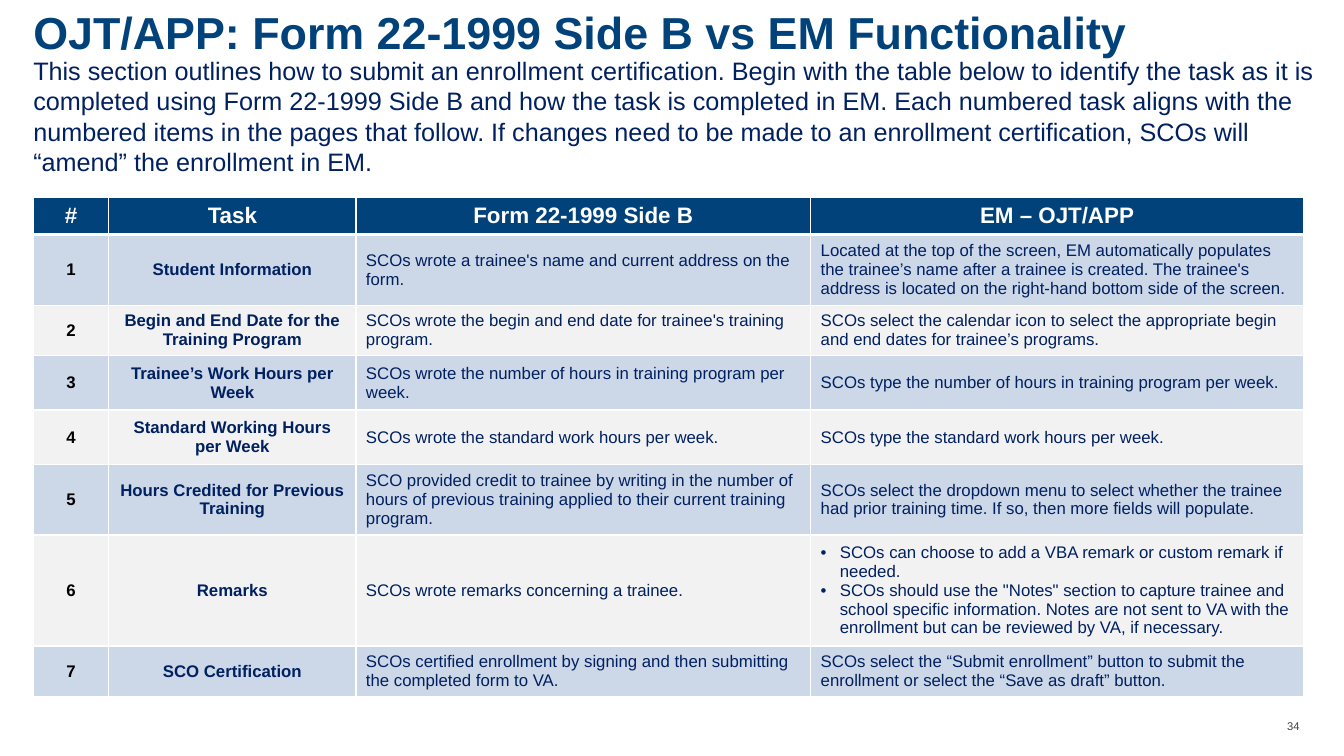
from dataclasses import dataclass

from lxml import etree
from pptx import Presentation
from pptx import util as u
from pptx.dml.color import RGBColor
from pptx.enum import text
from pptx.oxml.ns import qn


@dataclass(frozen=True)
class Theme:
    font: str = "Arial"
    heading: str = "004279"
    body: str = "002060"
    black: str = "000000"
    white: str = "FFFFFF"
    bands: tuple = ("CCD7E7", "F2F2F2")
    title_size: int = 32
    intro_size: int = 18
    header_size: int = 16
    cell_size: int = 12
    number_size: int = 8


CENTER, RIGHT = text.PP_ALIGN.CENTER, text.PP_ALIGN.RIGHT
MIDDLE = text.MSO_ANCHOR.MIDDLE

TITLE = "OJT/APP: Form 22-1999 Side B vs EM Functionality"
INTRO = (
    "This section outlines how to submit an enrollment certification. Begin with the "
    "table below to identify the task as it is completed using Form 22-1999 Side B and "
    "how the task is completed in EM. Each numbered task aligns with the numbered items "
    "in the pages that follow. If changes need to be made to an enrollment "
    "certification, SCOs will “amend” the enrollment in EM."
)
HEADERS = ("#", "Task", "Form 22-1999 Side B", "EM – OJT/APP")
COLUMN_WIDTHS = (0.75, 2.45, 4.51, 4.89)
ROW_HEIGHTS = (0.26, 0.39, 0.39, 0.54, 0.54, 0.54, 0.7, 0.39)

# Task, paper form, EM; a tuple holds bulleted paragraphs
TASKS = (
    ("Student Information",
     "SCOs wrote a trainee's name and current address on the form.",
     "Located at the top of the screen, EM automatically populates the trainee’s name "
     "after a trainee is created. The trainee's address is located on the right-hand "
     "bottom side of the screen."),
    ("Begin and End Date for the Training Program",
     "SCOs wrote the begin and end date for trainee's training program.",
     "SCOs select the calendar icon to select the appropriate begin and end dates for "
     "trainee’s programs."),
    ("Trainee’s Work Hours per Week",
     "SCOs wrote the number of hours in training program per week.",
     "SCOs type the number of hours in training program per week."),
    ("Standard Working Hours per Week",
     "SCOs wrote the standard work hours per week.",
     "SCOs type the standard work hours per week."),
    ("Hours Credited for Previous Training",
     "SCO provided credit to trainee by writing in the number of hours of previous "
     "training applied to their current training program.",
     "SCOs select the dropdown menu to select whether the trainee had prior training "
     "time. If so, then more fields will populate."),
    ("Remarks",
     "SCOs wrote remarks concerning a trainee.",
     ("SCOs can choose to add a VBA remark or custom remark if needed.",
      "SCOs should use the \"Notes\" section to capture trainee and school specific "
      "information. Notes are not sent to VA with the enrollment but can be reviewed "
      "by VA, if necessary.")),
    ("SCO Certification",
     "SCOs certified enrollment by signing and then submitting the completed form to VA.",
     "SCOs select the “Submit enrollment” button to submit the enrollment or select the "
     "“Save as draft” button."),
)


def write(para, words, *, font, size, color, bold=False, align=None,
          line_spacing=None, bullet=False, opacity=None):
    """Put formatted words into a paragraph."""
    if bullet:
        properties = para._p.get_or_add_pPr()
        properties.set("marL", str(u.Inches(0.19)))
        properties.set("indent", str(-u.Inches(0.19)))
        etree.SubElement(properties, qn("a:buFont"), typeface=font)
        etree.SubElement(properties, qn("a:buChar"), char="•")
    if align is not None:
        para.alignment = align
    if line_spacing is not None:
        para.line_spacing = line_spacing
    span = para.add_run()
    span.text = words
    span.font.name = font
    span.font.size = u.Pt(size)
    span.font.bold = bold
    span.font.color.rgb = RGBColor.from_string(color)
    if opacity is not None:
        tint = span._r.find(".//" + qn("a:srgbClr"))
        etree.SubElement(tint, qn("a:alpha"), val=str(opacity * 1000))


class SlideBuilder:
    def __init__(self, page, theme):
        self.page = page
        self.theme = theme

    def add_text(self, words, left, top, width, height, *, anchor=None, **style):
        box = self.page.shapes.add_textbox(*map(u.Inches, (left, top, width, height)))
        frame = box.text_frame
        frame.word_wrap = True
        frame.margin_left = frame.margin_right = 0
        frame.margin_top = frame.margin_bottom = 0
        if anchor is not None:
            frame.vertical_anchor = anchor
        write(frame.paragraphs[0], words, font=self.theme.font, **style)

    def add_borders(self, cell, top, bottom):
        properties = cell._tc.get_or_add_tcPr()
        for side, points in (("L", 1), ("R", 1), ("T", top), ("B", bottom)):
            line = etree.SubElement(properties, qn("a:ln" + side), w=str(u.Pt(points)))
            fill = etree.SubElement(line, qn("a:solidFill"))
            etree.SubElement(fill, qn("a:srgbClr"), val=self.theme.white)

    def fill_cell(self, cell, content, fill, *, top=1, bottom=1, **style):
        self.add_borders(cell, top, bottom)
        cell.fill.solid()
        cell.fill.fore_color.rgb = RGBColor.from_string(fill)
        cell.vertical_anchor = MIDDLE
        bulleted = isinstance(content, tuple)
        frame = cell.text_frame
        for index, words in enumerate(content if bulleted else (content,)):
            para = frame.add_paragraph() if index else frame.paragraphs[0]
            write(para, words, font=self.theme.font, bullet=bulleted, **style)

    def add_table(self, headers, tasks, left, top):
        theme = self.theme
        table = self.page.shapes.add_table(
            len(tasks) + 1, len(headers), u.Inches(left), u.Inches(top),
            u.Inches(sum(COLUMN_WIDTHS)), u.Inches(sum(ROW_HEIGHTS))).table
        for column, width in zip(table.columns, COLUMN_WIDTHS):
            column.width = u.Inches(width)
        for row, height in zip(table.rows, ROW_HEIGHTS):
            row.height = u.Inches(height)

        # Header row
        for column, label in enumerate(headers):
            self.fill_cell(table.cell(0, column), label, theme.heading, bottom=3,
                           size=theme.header_size, color=theme.white,
                           bold=True, align=CENTER)

        # Numbered task rows in alternating bands
        for row, task in enumerate(tasks, start=1):
            band = theme.bands[(row - 1) % 2]
            for column, content in enumerate((str(row), *task)):
                is_label = column < 2
                self.fill_cell(table.cell(row, column), content, band,
                               top=3 if row == 1 else 1, size=theme.cell_size,
                               color=theme.body if column else theme.black,
                               bold=is_label, align=CENTER if is_label else None)


def main():
    deck = Presentation()
    deck.slide_width, deck.slide_height = u.Inches(13.33), u.Inches(7.5)
    theme = Theme()
    builder = SlideBuilder(deck.slides.add_slide(deck.slide_layouts[6]), theme)

    # Page number
    builder.add_text("34", 12.47, 7.09, 0.42, 0.23, anchor=MIDDLE, align=RIGHT,
                     size=theme.number_size, color=theme.black, opacity=75)
    # Title and introduction
    builder.add_text(TITLE, 0.33, 0.15, 12.09, 0.4, size=theme.title_size,
                     color=theme.heading, bold=True, line_spacing=0.8)
    builder.add_text(INTRO, 0.33, 0.55, 13.01, 0.98, size=theme.intro_size,
                     color=theme.body)
    # Comparison table
    builder.add_table(HEADERS, TASKS, 0.33, 1.96)

    deck.save("out.pptx")


if __name__ == "__main__":
    main()
